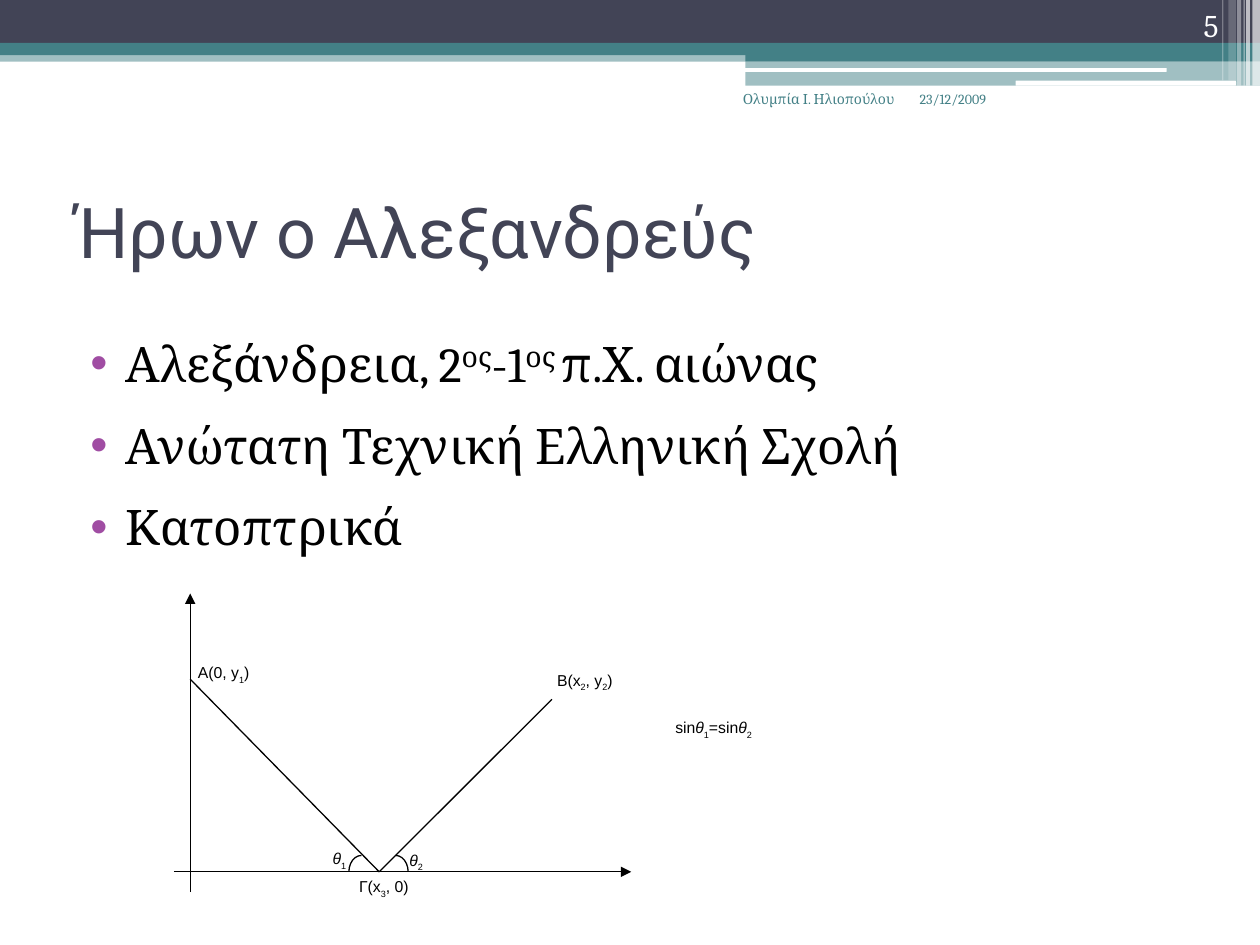
from dataclasses import dataclass

from lxml import etree
from pptx import Presentation
from pptx.dml.color import RGBColor
from pptx.enum.shapes import MSO_CONNECTOR, MSO_SHAPE
from pptx.enum.text import MSO_ANCHOR, PP_ALIGN
from pptx.oxml.ns import qn
from pptx.util import Pt

RECT, ROUNDED, ARC = MSO_SHAPE.RECTANGLE, MSO_SHAPE.ROUNDED_RECTANGLE, MSO_SHAPE.ARC
STRAIGHT = MSO_CONNECTOR.STRAIGHT
LEFT, RIGHT = PP_ALIGN.LEFT, PP_ALIGN.RIGHT
TOP, MIDDLE, BOTTOM = MSO_ANCHOR.TOP, MSO_ANCHOR.MIDDLE, MSO_ANCHOR.BOTTOM


@dataclass(frozen=True)
class Theme:
    navy: str = "424456"
    teal: str = "438086"
    white: str = "FFFFFF"
    black: str = "000000"
    purple: str = "A04DA3"
    heading: str = "Roboto"
    body: str = "Cambria"
    diagram: str = "Arial"
    title_size: float = 40
    body_size: float = 28
    number_size: float = 18
    label_size: float = 9
    footer_size: float = 8
    line_width: float = 0.75


THEME = Theme()
MARKS = {"_": "-30000", "^": "30000"}


def add_bar(shapes, box, color, alpha=100, kind=RECT):
    sp = shapes.add_shape(kind, *map(Pt, box))
    sp.shadow.inherit = False
    sp.fill.solid()
    sp.fill.fore_color.rgb = RGBColor.from_string(color)
    sp.line.fill.background()
    if alpha < 100:
        clr = sp.fill._xPr.find(".//" + qn("a:srgbClr"))
        etree.SubElement(clr, qn("a:alpha"), val=str(alpha * 1000))
    return sp


def add_bullet(p, color):
    p.line_spacing = 1.3
    p.space_before = Pt(3)
    pPr = p._p.get_or_add_pPr()
    pPr.set("marL", str(Pt(28.8)))
    pPr.set("indent", str(Pt(-20.16)))
    clr = etree.SubElement(pPr, qn("a:buClr"))
    etree.SubElement(clr, qn("a:srgbClr"), val=color)
    etree.SubElement(pPr, qn("a:buFont"), typeface="Arial")
    etree.SubElement(pPr, qn("a:buChar"), char="•")


def add_text(shapes, box, text, size, font, color, align=LEFT, anchor=TOP,
             inset=None, bullet=None):
    """Pieces split by | may start with _ (subscript), ^ (superscript) or / (italic)."""
    tf = shapes.add_textbox(*map(Pt, box)).text_frame
    tf.word_wrap = True
    tf.vertical_anchor = anchor
    if inset is not None:
        tf.margin_left = tf.margin_right = tf.margin_top = tf.margin_bottom = Pt(inset)
    for i, line in enumerate(text.split("\n")):
        p = tf.add_paragraph() if i else tf.paragraphs[0]
        p.alignment = align
        if bullet:
            add_bullet(p, bullet)
        for piece in line.split("|"):
            mark = piece[0] if piece[0] in "_^/" else ""
            r = p.add_run()
            r.text = piece[len(mark):]
            r.font.size = Pt(size)
            r.font.name = font
            r.font.color.rgb = RGBColor.from_string(color)
            if mark == "/":
                r.font.italic = True
            elif mark:
                r.font._element.set("baseline", MARKS[mark])


def set_stroke(sp):
    sp.line.color.rgb = RGBColor.from_string(THEME.black)
    sp.line.width = Pt(THEME.line_width)


def add_line(shapes, start, end, arrow=False):
    cxn = shapes.add_connector(STRAIGHT, *map(Pt, start + end))
    set_stroke(cxn)
    if arrow:
        etree.SubElement(cxn.line._get_or_add_ln(), qn("a:tailEnd"), type="triangle")
    etree.SubElement(cxn._element.spPr, qn("a:effectLst"))


def add_angle(shapes, center, first, last):
    rx, ry = 7.2, 9.4
    x, y = center
    sp = shapes.add_shape(ARC, Pt(x - rx), Pt(y - ry), Pt(2 * rx), Pt(2 * ry))
    sp.shadow.inherit = False
    sp.adjustments[0] = first * 0.6
    sp.adjustments[1] = last * 0.6
    sp.fill.background()
    set_stroke(sp)


def draw_header(shapes):
    t = THEME
    for box, color, alpha in [
        ((0, 28.8, 720, 6.5), t.teal, 50),
        ((0, 0, 720, 24.5), t.navy, 100),
        ((0, 24.5, 720, 7), t.teal, 100),
        ((426, 28, 294, 7), t.teal, 100),
        ((426, 35, 294, 14), t.teal, 50),
    ]:
        add_bar(shapes, box, color, alpha)
    for box in [(425.5, 38.9, 241.2, 2.2), (580.3, 46.1, 126, 2.9)]:
        add_bar(shapes, box, t.white, kind=ROUNDED)
    for x, width, height, alpha in [
        (715.7, 4.3, 49, 65), (712.1, 2.2, 49, 65), (710.6, 0.7, 49, 60),
        (707, 2.2, 49, 40), (702, 4.3, 46, 20), (698.4, 0.7, 46, 30),
    ]:
        add_bar(shapes, (x, 0, width, height), t.white, alpha)


def draw_text(shapes):
    t = THEME
    add_text(shapes, (36, 90, 648, 84), "Ήρων ο Αλεξανδρεύς",
             t.title_size, t.heading, t.navy, anchor=MIDDLE)
    add_text(shapes, (36, 177, 648, 340.5),
             "Αλεξάνδρεια, 2|^ος|-1|^ος |π.Χ. αιώνας\n"
             "Ανώτατη Τεχνική Ελληνική Σχολή\n"
             "Κατοπτρικά",
             t.body_size, t.body, t.black, bullet=t.purple)
    add_text(shapes, (518.4, 48.2, 75.6, 36), "23/12/2009",
             t.footer_size, t.body, t.teal)
    add_text(shapes, (414, 48.2, 104.4, 36), "Ολυμπία Ι. Ηλιοπούλου",
             t.footer_size, t.body, t.teal, align=RIGHT)
    add_text(shapes, (643.7, 0, 59.8, 28.8), "5",
             t.number_size, t.body, t.white, align=RIGHT, anchor=BOTTOM)


def draw_diagram(shapes):
    t = THEME
    axis_x, axis_y = 108.7, 498.2
    a, b, c = (axis_x, 388.1), (315.4, 399.6), (216.7, axis_y)
    add_line(shapes, (axis_x, 509.8), (axis_x, 339.1), arrow=True)
    add_line(shapes, (99.4, axis_y), (360.7, axis_y), arrow=True)
    add_line(shapes, a, c)
    add_line(shapes, c, b)
    for x, y, width, text in [
        (110.2, 375.8, 51.1, "Α(0, y|_1|)"),
        (315.4, 380.2, 51.1, "B(x|_2|, y|_2|)"),
        (187.2, 482.4, 17.3, "/θ|_1"),
        (202.3, 498.2, 51.1, "Γ(x|_3|, 0)"),
        (383, 407.5, 56.9, "sin|/θ|_1|=sin|/θ|_2"),
        (231.1, 483.1, 17.3, "/θ|_2"),
    ]:
        add_text(shapes, (x, y, width, 19.4), text,
                 t.label_size, t.diagram, t.black, inset=2.9)
    add_angle(shapes, (206.6, axis_y), 180, 270)
    add_angle(shapes, (226.1, axis_y), 270, 0)


def main():
    prs = Presentation()
    prs.slide_width, prs.slide_height = Pt(720), Pt(540)
    slide = prs.slides.add_slide(prs.slide_layouts[6])
    draw_header(slide.shapes)
    draw_text(slide.shapes)
    draw_diagram(slide.shapes.add_group_shape().shapes)
    prs.save("out.pptx")


if __name__ == "__main__":
    main()
